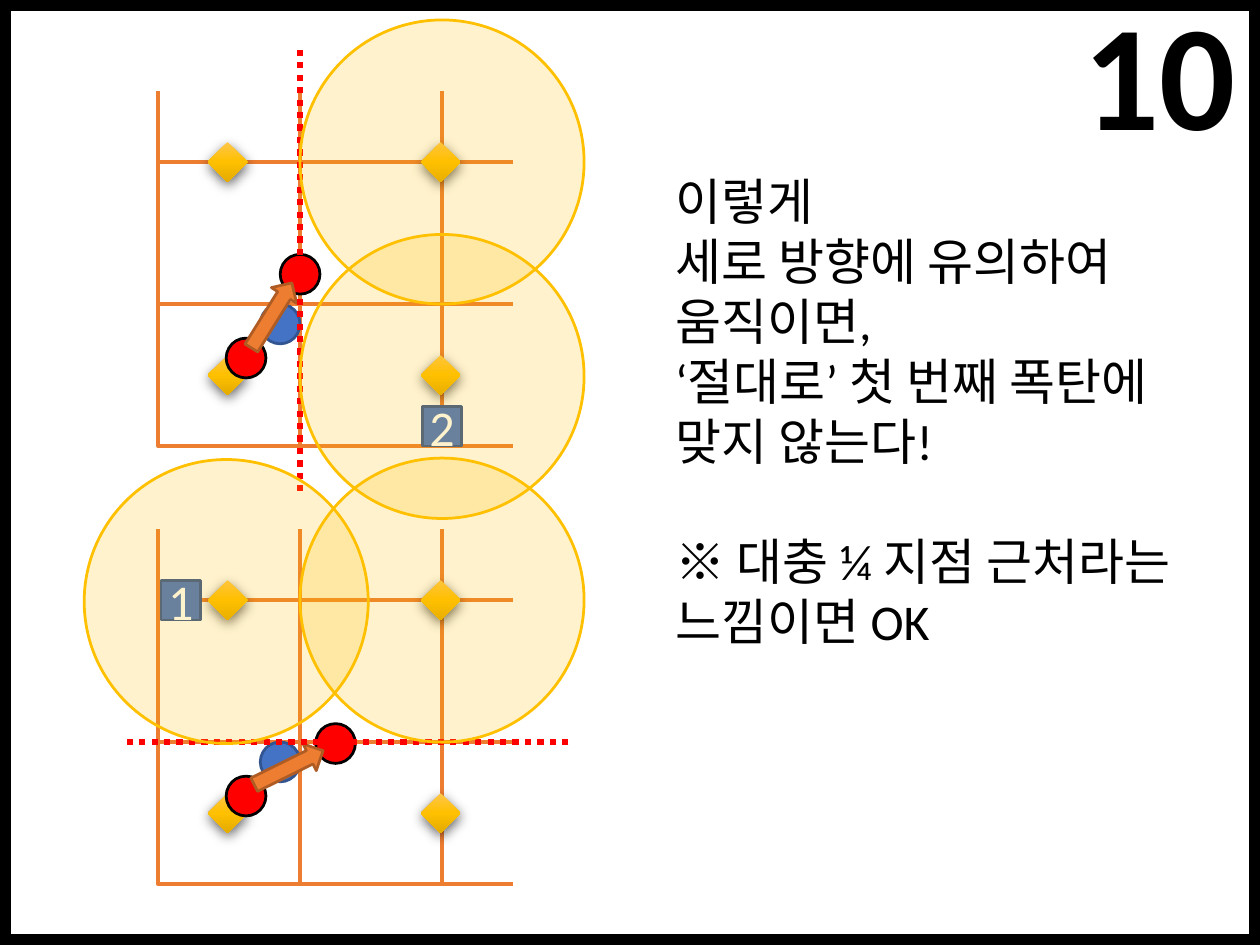
from copy import deepcopy
from dataclasses import dataclass
from typing import NamedTuple, Optional

from lxml import etree
from pptx import Presentation
from pptx.dml.color import RGBColor
from pptx.enum.dml import MSO_LINE
from pptx.enum.shapes import MSO_CONNECTOR, MSO_SHAPE
from pptx.enum.text import MSO_ANCHOR, MSO_AUTO_SIZE, PP_ALIGN
from pptx.oxml.ns import qn
from pptx.util import Cm, Emu, Inches, Pt

RECTANGLE = MSO_SHAPE.RECTANGLE
OVAL = MSO_SHAPE.OVAL
DIAMOND = MSO_SHAPE.DIAMOND
UP_ARROW = MSO_SHAPE.UP_ARROW
STRAIGHT = MSO_CONNECTOR.STRAIGHT
DOTTED = MSO_LINE.ROUND_DOT
CENTER = PP_ALIGN.CENTER
MIDDLE = MSO_ANCHOR.MIDDLE
FIXED_SIZE = MSO_AUTO_SIZE.NONE

PAGE_WIDTH, PAGE_HEIGHT = Cm(16), Cm(12)
CELL = Inches(0.71)
TOKEN = 0.28  # side of a token, in cells


@dataclass(frozen=True)
class Theme:
    font: str = "Calibri"
    ink: str = "000000"
    paper: str = "FFFFFF"
    grid: str = "ED7D31"
    arrow_edge: str = "AF5C24"
    player: str = "FF0000"
    blue: str = "4472C4"
    blue_edge: str = "325491"
    blast: str = "FFC000"
    gem: tuple[str, ...] = ("FFC64B", "FFC000", "E3AB00")
    title_size: int = 54
    text_size: int = 18
    thin: float = 1
    medium: float = 1.5
    thick: float = 2.25


THEME = Theme()


class Spot(NamedTuple):
    """A point on a board, in columns and rows."""
    col: float
    row: float


class Share(NamedTuple):
    """A box given as shares of the slide's size."""
    left: float
    top: float
    width: float
    height: float


@dataclass(frozen=True)
class Board:
    left: float
    top: float
    target: Spot
    arrow: Spot
    angle: float
    limit: tuple[Spot, Spot]
    block: Spot
    label: str
    blasts: tuple[Spot, Spot]

    def point(self, spot: Spot) -> tuple[Emu, Emu]:
        return (Emu(int(Inches(self.left) + spot.col * CELL)),
                Emu(int(Inches(self.top) + spot.row * CELL)))


GEMS = [Spot(col, row) for row in (0, 1.5) for col in (0.49, 1.99)]
BLUE_BALL = Spot(0.86, 1.14)
START = Spot(0.62, 1.38)
BOARDS = [
    Board(0.79, 0.81, Spot(1, 0.79), Spot(0.8, 1.08), 31.9,
          (Spot(1, -0.79), Spot(1, 2.32)), Spot(2, 1.86), "2",
          (Spot(2, 0), Spot(2, 1.51))),
    Board(0.79, 3, Spot(1.25, 1.01), Spot(0.92, 1.18), 63.7,
          (Spot(2.89, 1), Spot(-0.24, 1)), Spot(0.16, 0), "1",
          (Spot(0.48, 0.01), Spot(2, 0))),
]
LINES = ["이렇게", "세로 방향에 유의하여", "움직이면,", "‘절대로’ 첫 번째 폭탄에",
         "맞지 않는다!", "※ 대충 ¼ 지점 근처라는", "느낌이면 OK"]
NOTE_START = 5
TITLE_BOX = Share(0.84, -0.03, 0.16, 0.21)
BODY_BOX = Share(0.52, 0.17, 0.43, 0.59)


def rgb(code: str) -> RGBColor:
    return RGBColor.from_string(code)


def add_line(page, board: Board, start: Spot, end: Spot, color: str, weight: float):
    line = page.shapes.add_connector(STRAIGHT, *board.point(start), *board.point(end))
    line.line.color.rgb = rgb(color)
    line.line.width = Pt(weight)
    etree.SubElement(line._element.spPr, qn("a:effectLst"))
    return line


def add_token(page, board: Board, kind, center: Spot, fill: Optional[str], edge: str,
              width: float = TOKEN, height: float = TOKEN, weight: float = THEME.thin):
    """Centre a shape on a spot; its width and height are in cells."""
    corner = Spot(center.col - width / 2, center.row - height / 2)
    token = page.shapes.add_shape(kind, *board.point(corner),
                                  Emu(int(width * CELL)), Emu(int(height * CELL)))
    token.shadow.inherit = False
    if fill:
        token.fill.solid()
        token.fill.fore_color.rgb = rgb(fill)
    else:
        token.fill.background()
    token.line.color.rgb = rgb(edge)
    token.line.width = Pt(weight)
    return token


def add_gem(page, board: Board, center: Spot) -> None:
    gem = add_token(page, board, DIAMOND, center, None, THEME.grid)
    gem.line.fill.background()
    gem.fill.gradient()
    gem.fill.gradient_angle = 270
    properties = gem._element.spPr
    stops = properties.find(".//" + qn("a:gsLst"))
    stops.insert(1, deepcopy(stops[0]))
    for index, (stop, color) in enumerate(zip(gem.fill.gradient_stops, THEME.gem)):
        stop.color.rgb = rgb(color)
        stop.position = index / 2
    shadow = etree.SubElement(properties.find(qn("a:effectLst")), qn("a:outerShdw"),
                              blurRad=str(Pt(4.5)), dist=str(Pt(1.5)), dir="5400000",
                              algn="ctr", rotWithShape="0")
    color = etree.SubElement(shadow, qn("a:srgbClr"), val=THEME.ink)
    etree.SubElement(color, qn("a:alpha"), val="63000")


def add_blast(page, board: Board, center: Spot) -> None:
    blast = add_token(page, board, OVAL, center, THEME.blast, THEME.blast, 2, 2)
    color = blast._element.spPr.find(qn("a:solidFill"))[0]
    etree.SubElement(color, qn("a:alpha"), val="20000")


def add_block(page, board: Board) -> None:
    block = add_token(page, board, RECTANGLE, board.block, THEME.blue, THEME.blue_edge)
    frame = block.text_frame
    frame.text = board.label
    frame.margin_left = frame.margin_right = 0
    frame.vertical_anchor = MIDDLE
    format_text(frame, THEME.text_size, THEME.paper)
    frame.paragraphs[0].alignment = CENTER


def format_text(frame, size: float, color: str, bold: bool = False) -> None:
    for para in frame.paragraphs:
        for span in para.runs:
            span.font.name = THEME.font
            span.font.size = Pt(size)
            span.font.bold = bold
            span.font.color.rgb = rgb(color)
            etree.SubElement(span.font._element, qn("a:ea"), typeface=THEME.font)


def place(box, share: Share) -> None:
    box.left, box.width = (int(part * PAGE_WIDTH) for part in (share.left, share.width))
    box.top, box.height = (int(part * PAGE_HEIGHT) for part in (share.top, share.height))


def add_texts(page) -> None:
    title, body = page.shapes.title, page.placeholders[1]
    place(title, TITLE_BOX)
    frame = title.text_frame
    frame.text = "10"
    frame.word_wrap = False
    frame.auto_size = FIXED_SIZE
    frame.margin_left = frame.margin_right = 0
    frame.vertical_anchor = MIDDLE
    frame.paragraphs[0].alignment = CENTER
    format_text(frame, THEME.title_size, THEME.ink, bold=True)

    place(body, BODY_BOX)
    frame = body.text_frame
    frame.text = "\n".join(LINES)
    frame.word_wrap = True
    frame.auto_size = FIXED_SIZE
    format_text(frame, THEME.text_size, THEME.ink)
    for index, para in enumerate(frame.paragraphs):
        para.space_before = Pt(THEME.text_size * 1.2 if index == NOTE_START else 0)
        properties = para._p.get_or_add_pPr()
        properties.set("marL", "0")
        properties.set("indent", "0")
        etree.SubElement(properties, qn("a:buNone"))


def add_border(page) -> None:
    edge = PAGE_HEIGHT // 100
    for left, top, width, height in [(0, 0, PAGE_WIDTH, edge), (0, 0, edge, PAGE_HEIGHT),
                                     (0, PAGE_HEIGHT - edge, PAGE_WIDTH, edge),
                                     (PAGE_WIDTH - edge, 0, edge, PAGE_HEIGHT)]:
        bar = page.shapes.add_shape(RECTANGLE, left, top, width, height)
        bar.shadow.inherit = False
        bar.fill.solid()
        bar.fill.fore_color.rgb = bar.line.color.rgb = rgb(THEME.ink)
        bar.line.width = Pt(THEME.thin)


def add_board(page, board: Board) -> None:
    for step in range(3):
        for start, end in [(Spot(step, 0), Spot(step, -0.5)), (Spot(2, step), Spot(2.5, step))]:
            add_line(page, board, start, end, THEME.grid, THEME.medium)
    for row in (0.5, 1.5):
        for col in (0.5, 1.5):
            add_token(page, board, RECTANGLE, Spot(col, row), None, THEME.grid, 1, 1, THEME.medium)
    add_token(page, board, OVAL, BLUE_BALL, THEME.blue, THEME.blue_edge)
    for center in GEMS:
        add_gem(page, board, center)
    for center in (START, board.target):
        add_token(page, board, OVAL, center, THEME.player, THEME.ink)
    arrow = add_token(page, board, UP_ARROW, board.arrow, THEME.grid, THEME.arrow_edge, 0.21, 0.54)
    arrow.rotation = board.angle
    limit = add_line(page, board, *board.limit, THEME.player, THEME.thick)
    limit.line.dash_style = DOTTED


def main() -> None:
    deck = Presentation()
    deck.slide_width, deck.slide_height = PAGE_WIDTH, PAGE_HEIGHT
    page = deck.slides.add_slide(deck.slide_layouts[1])
    add_border(page)
    add_texts(page)
    for board in BOARDS:
        add_board(page, board)
    for board in BOARDS:
        add_block(page, board)
    for board in BOARDS:
        for center in board.blasts:
            add_blast(page, board, center)
    deck.save("out.pptx")


if __name__ == "__main__":
    main()
